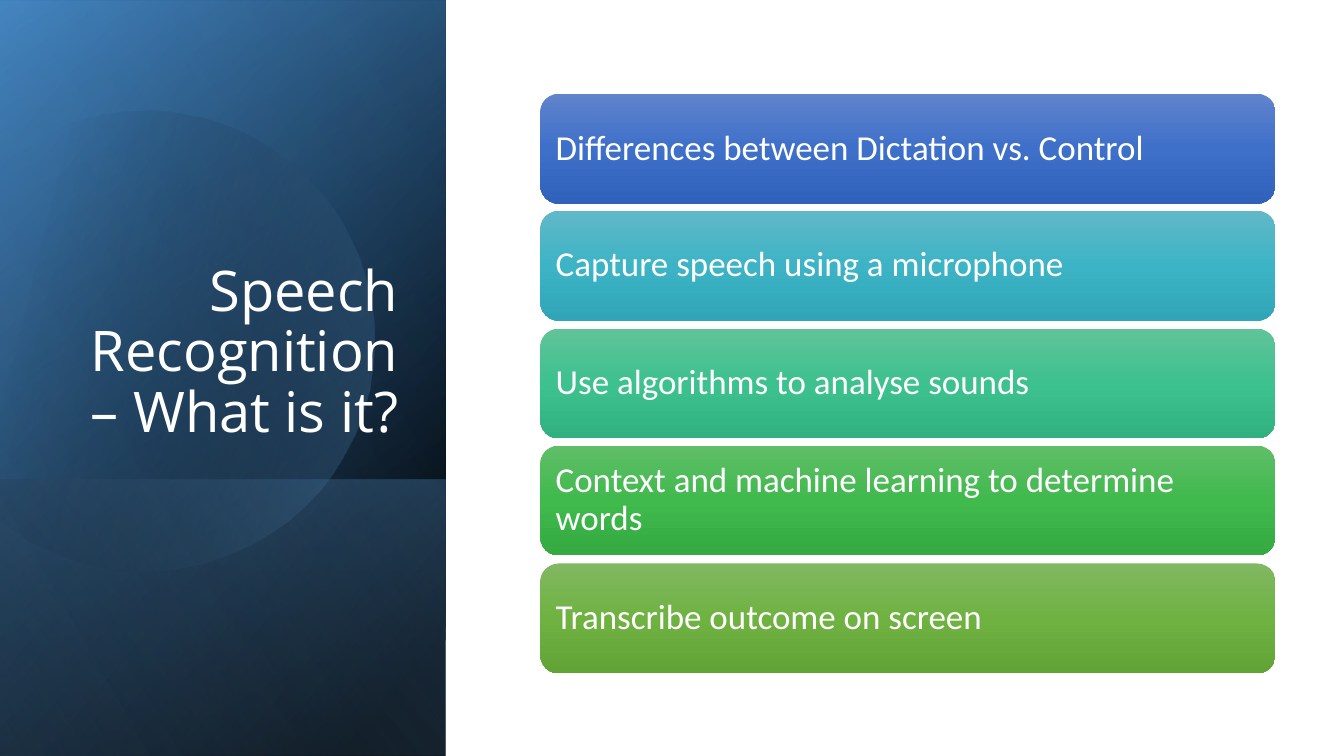
from math import cos, radians, sin

from lxml.etree import SubElement
from pptx import Presentation
from pptx.dml.color import RGBColor
from pptx.enum.shapes import MSO_SHAPE
from pptx.enum.text import MSO_ANCHOR, MSO_AUTO_SIZE, PP_ALIGN
from pptx.oxml.ns import qn
from pptx.util import Pt

PX = 9144  # 100 px to the inch


def paint(shape, angle, stops):
    """Fill with a gradient of (position %, hex colour, opacity %) stops."""
    shape.shadow.inherit = False
    shape.line.fill.background()
    shape.fill.gradient()
    shape.fill.gradient_angle = 360 - angle
    stop_list = shape.element.spPr.find(qn("a:gradFill")).find(qn("a:gsLst"))
    for default_stop in list(stop_list):
        stop_list.remove(default_stop)
    for position, colour, opacity in stops:
        stop = SubElement(stop_list, qn("a:gs"), pos=str(position * 1000))
        rgb = SubElement(stop, qn("a:srgbClr"), val=colour)
        if opacity < 100:
            SubElement(rgb, qn("a:alpha"), val=str(opacity * 1000))


def write(shape, text, font_name, size, align, anchor):
    frame = shape.text_frame
    frame.text = text
    frame.word_wrap = True
    frame.auto_size = MSO_AUTO_SIZE.NONE
    frame.vertical_anchor = anchor
    paragraph = frame.paragraphs[0]
    paragraph.alignment = align
    paragraph.line_spacing = 0.9
    font = paragraph.runs[0].font
    font.name, font.size = font_name, Pt(size)
    font.color.rgb = RGBColor.from_string("FFFFFF")


prs = Presentation()
prs.slide_width, prs.slide_height = 1333 * PX, 750 * PX
slide = prs.slides.add_slide(prs.slide_layouts[5])
shapes = slide.shapes

# Side panel: gradient layers, each turned a quarter and mirrored
full_panel = (-154, 154, 750, 442)
panel_layers = [
    (full_panel, 50, [(8, "000000", 100), (100, "2E75B6", 100)]),
    ((-154, 155, 750, 442), 30, [(0, "000000", 0), (99, "5B9BD5", 46)]),
    ((84, 392, 274, 442), 130, [(2, "5B9BD5", 29), (100, "000000", 30)]),
    (full_panel, 120, [(0, "000000", 0), (99, "9DC3E6", 11)]),
]
for number, (box, angle, stops) in enumerate(panel_layers):
    # The clipped circle lies under the last layer
    if number == 3:
        tilt = 343.9
        centre_x, centre_y = 158.5, 334.5
        outline = [(149, 110)]
        arcs = [
            [(246, 112), (335, 177), (363, 275)],
            [(398, 397), (328, 523), (207, 558)],
            [(131, 580), (53, 561), (-3, 514)],
            [(-15, 503)],
            [(-15, 175)],
            [(0, 161)],
            [(23, 142), (50, 128), (80, 119)],
            [(103, 113), (126, 110), (149, 110)],
        ]
        for arc in arcs:
            if len(arc) == 1:
                outline += arc
                continue
            curve = [outline[-1], *arc]
            for step in range(1, 17):
                t = step / 16
                weights = ((1 - t) ** 3, 3 * t * (1 - t) ** 2, 3 * t * t * (1 - t), t ** 3)
                outline.append(tuple(
                    sum(w * point[axis] for w, point in zip(weights, curve))
                    for axis in (0, 1)))
        # Turn the outline back, so that the shape's rotation restores it
        c, s = cos(radians(-tilt)), sin(radians(-tilt))
        turned = [
            (centre_x + (x - centre_x) * c - (y - centre_y) * s,
             centre_y + (x - centre_x) * s + (y - centre_y) * c)
            for x, y in outline]
        builder = shapes.build_freeform(*turned[0], scale=PX)
        builder.add_line_segments(turned[1:], close=True)
        circle = builder.convert_to_shape()
        circle.rotation = tilt
        paint(circle, 30, [(29, "000000", 0), (100, "5B9BD5", 43)])

    layer = shapes.add_shape(MSO_SHAPE.RECTANGLE, *(v * PX for v in box))
    layer.rotation = 90
    layer.element.spPr.find(qn("a:xfrm")).set("flipH", "1")
    paint(layer, angle, stops)

# Title, brought in front of the panel
title = shapes.title
title.left, title.top, title.width, title.height = (v * PX for v in (64, 184, 341, 262))
write(title, "Speech Recognition – What is it?", "Open Sans", 40,
      PP_ALIGN.RIGHT, MSO_ANCHOR.BOTTOM)
title.element.getparent().append(title.element)

# Topic cards
topics = [
    ("Differences between Dictation vs. Control", "6183CB", "3E70CA", "3062BB"),
    ("Capture speech using a microphone", "61B8C7", "3DB4C6", "30A5B7"),
    ("Use algorithms to analyse sounds", "60C39A", "3DC18F", "31B080"),
    ("Context and machine learning to determine words", "60BE68", "40B94D", "34AA41"),
    ("Transcribe outcome on screen", "81B861", "6FB242", "62A336"),
]
for row, (topic, light, middle, dark) in enumerate(topics):
    top = 93 + row * 233 // 2
    card = shapes.add_shape(MSO_SHAPE.ROUNDED_RECTANGLE,
                            536 * PX, top * PX, 729 * PX, 109 * PX)
    paint(card, 90, [(0, light, 100), (50, middle, 100), (100, dark, 100)])
    write(card, topic, "Calibri", 25, PP_ALIGN.LEFT, MSO_ANCHOR.MIDDLE)
    frame = card.text_frame
    frame.margin_left = frame.margin_right = 10 * PX
    frame.margin_top = frame.margin_bottom = 10 * PX

prs.save("out.pptx")
